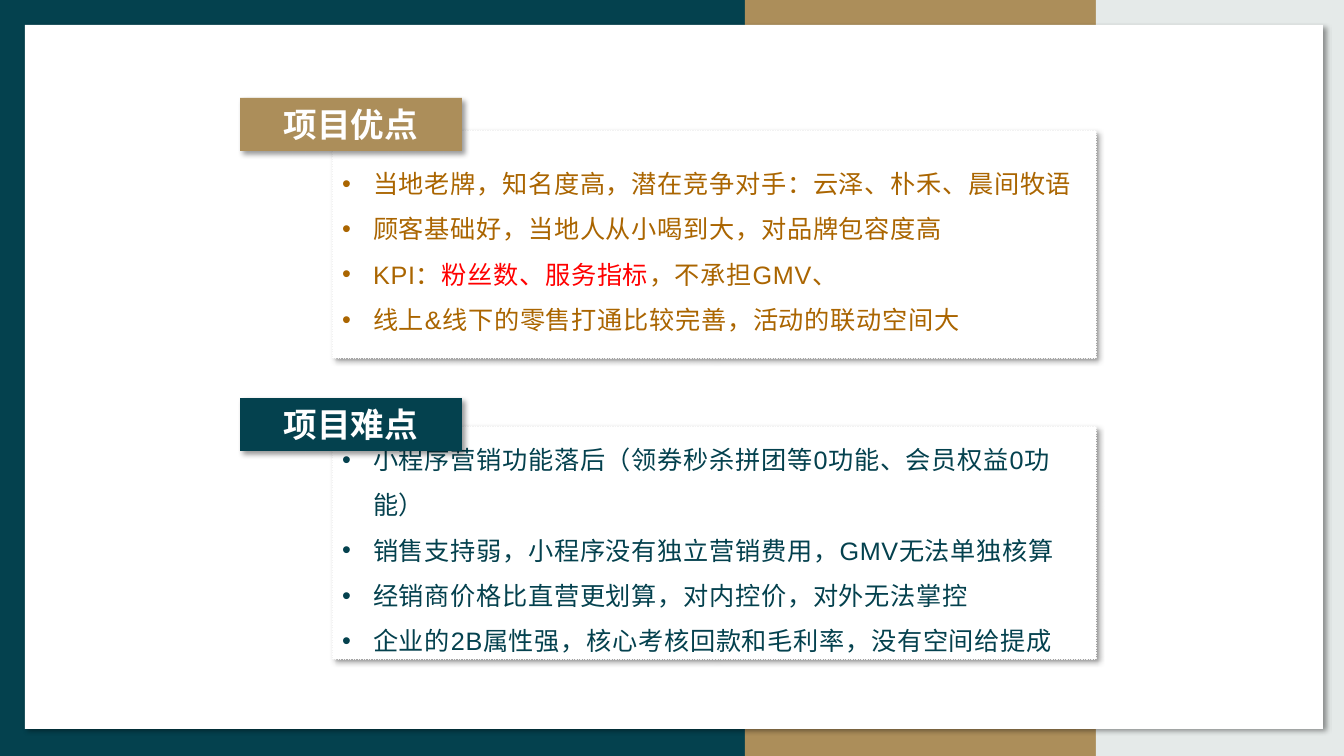
from pptx import Presentation
from pptx.dml.color import RGBColor
from pptx.enum.dml import MSO_LINE as Dash
from pptx.enum.shapes import MSO_SHAPE as Geom
from pptx.enum.text import MSO_ANCHOR as Anchor, MSO_AUTO_SIZE as Fit, PP_ALIGN as Align
from pptx.oxml.ns import qn
from pptx.util import Pt
from lxml.etree import SubElement as Sub

SCALE = 12192000 / 1344
TEAL = RGBColor(0x04, 0x41, 0x4E)
GOLD = RGBColor(0xAC, 0x8E, 0x5A)
MIST = RGBColor(0xE5, 0xEA, 0xE9)
WHITE = RGBColor(0xFF, 0xFF, 0xFF)
EDGE = RGBColor(0xF2, 0xF2, 0xF2)
AMBER = RGBColor(0xAA, 0x65, 0x00)
RED = RGBColor(0xFF, 0x00, 0x00)
BLACK = RGBColor(0x00, 0x00, 0x00)

PROS = [
    [("当地老牌，知名度高，潜在竞争对手：云泽、朴禾、晨间牧语", None)],
    [("顾客基础好，当地人从小喝到大，对品牌包容度高", None)],
    [("KPI：", None), ("粉丝数、服务指标", RED), ("，不承担GMV、", None)],
    [("线上&线下的零售打通比较完善，活动的联动空间大", None)],
]
CONS = [
    [("小程序营销功能落后（领券秒杀拼团等0功能、会员权益0功能）", None)],
    [("销售支持弱，小程序没有独立营销费用，GMV无法单独核算", None)],
    [("经销商价格比直营更划算，对内控价，对外无法掌控", None)],
    [("企业的2B属性强，核心考核回款和毛利率，没有空间给提成", None)],
]


def px(num):
    return round(num * SCALE)


def paint(shape, color):
    shape.fill.solid()
    shape.fill.fore_color.rgb = color
    shape.line.fill.background()
    shape.shadow.inherit = False


def shade(shape):
    effects = shape._element.spPr.find(qn("a:effectLst"))
    outer = Sub(effects, qn("a:outerShdw"), blurRad=str(Pt(4)), dist=str(Pt(3)),
                dir="2700000", algn="tl", rotWithShape="0")
    tone = Sub(outer, qn("a:srgbClr"), val=str(BLACK))
    Sub(tone, qn("a:alpha"), val="40000")


def add_rect(shapes, box, color):
    rect = shapes.add_shape(Geom.RECTANGLE, *map(px, box))
    paint(rect, color)
    return rect


def place(slide, idx, box, color):
    holder = slide.placeholders[idx]
    holder.left, holder.top, holder.width, holder.height = map(px, box)
    paint(holder, color)
    shade(holder)
    slide.shapes._spTree.append(holder._element)
    frame = holder.text_frame
    frame.word_wrap = True
    frame.auto_size = Fit.NONE
    frame.vertical_anchor = Anchor.MIDDLE
    return holder


def style(para, name, size, color, bold):
    para.space_before = Pt(0)
    font = para.font
    font.name, font.size, font.bold = name, Pt(size), bold
    font.color.rgb = color
    return para._p.pPr.find(qn("a:defRPr"))


def add_list(slide, idx, box, color, items):
    holder = place(slide, idx, box, WHITE)
    holder.line.color.rgb = EDGE
    holder.line.width = Pt(0.25)
    holder.line.dash_style = Dash.DASH
    frame = holder.text_frame
    for num, item in enumerate(items):
        para = frame.add_paragraph() if num else frame.paragraphs[0]
        props = para._p.get_or_add_pPr()
        props.set("marL", str(px(31)))
        props.set("indent", str(px(-31)))
        Sub(props, qn("a:buFont"), typeface="Arial")
        Sub(props, qn("a:buChar"), char="•")
        para.line_spacing = 1.5
        style(para, "Arial", 18, color, False).set("spc", "50")
        for text, tint in item:
            run = para.add_run()
            run.text = text
            if tint:
                run.font.color.rgb = tint


def add_head(slide, idx, box, color, text):
    para = place(slide, idx, box, color).text_frame.paragraphs[0]
    para.text = text
    para.alignment = Align.CENTER
    face = "Noto Sans CJK SC"
    props = style(para, face, 24, WHITE, True)
    Sub(props, qn("a:ea"), typeface=face)


def main():
    deck = Presentation()
    deck.slide_width, deck.slide_height = px(1344), px(756)
    slide = deck.slides.add_slide(deck.slide_layouts[4])
    title = slide.shapes.title._element
    title.getparent().remove(title)

    bars = slide.shapes.add_group_shape()
    left = 0
    for width, color in ((745, TEAL), (351, GOLD), (248, MIST)):
        add_rect(bars.shapes, (left, 0, width, 756), color)
        left += width
    shade(add_rect(slide.shapes, (25, 25, 1298, 704), WHITE))

    add_list(slide, 2, (332, 130, 764, 228), AMBER, PROS)
    add_list(slide, 4, (332, 426, 764, 233), TEAL, CONS)
    add_head(slide, 1, (240, 98, 222, 53), GOLD, "项目优点")
    add_head(slide, 3, (240, 398, 222, 53), TEAL, "项目难点")
    deck.save("out.pptx")


if __name__ == "__main__":
    main()
